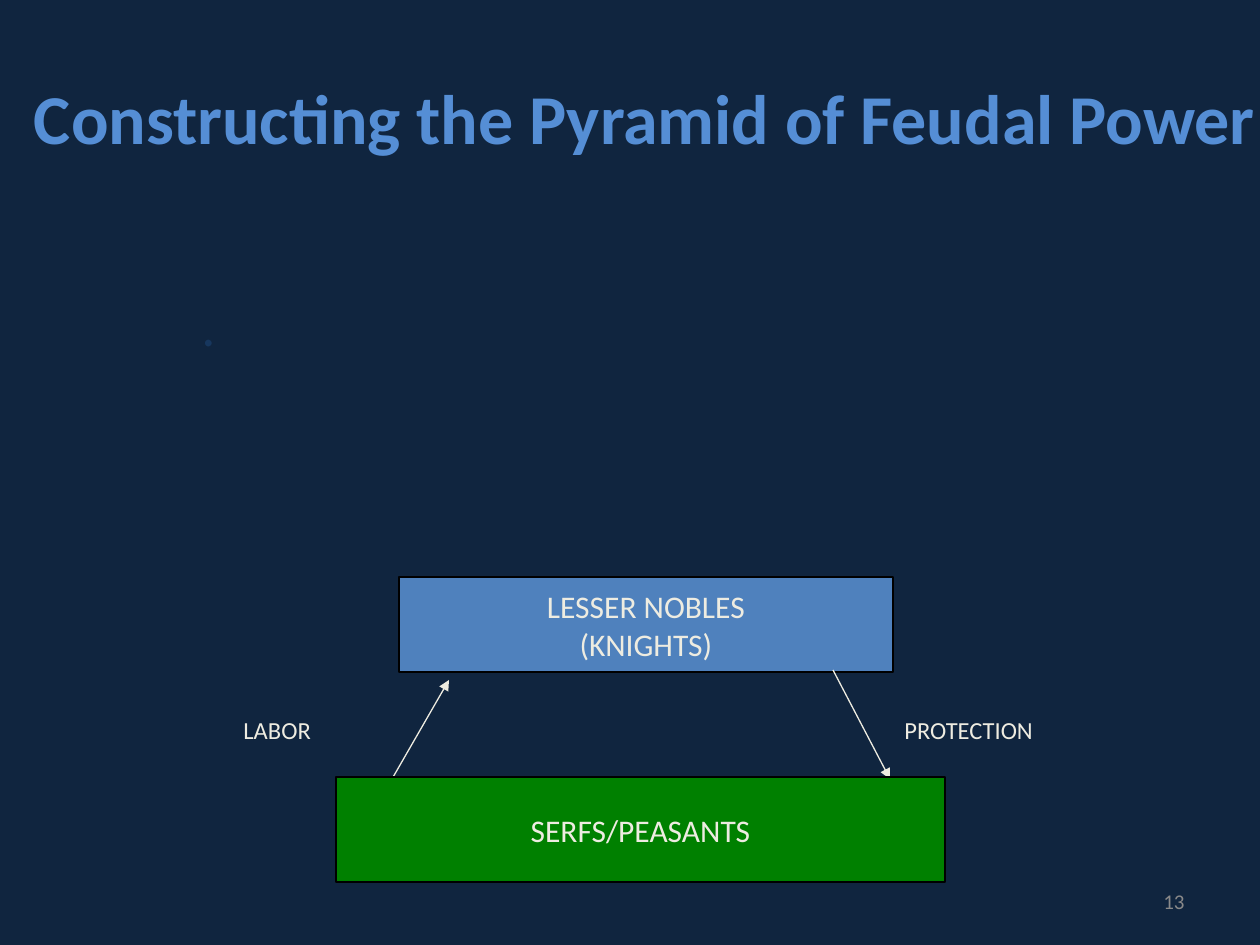
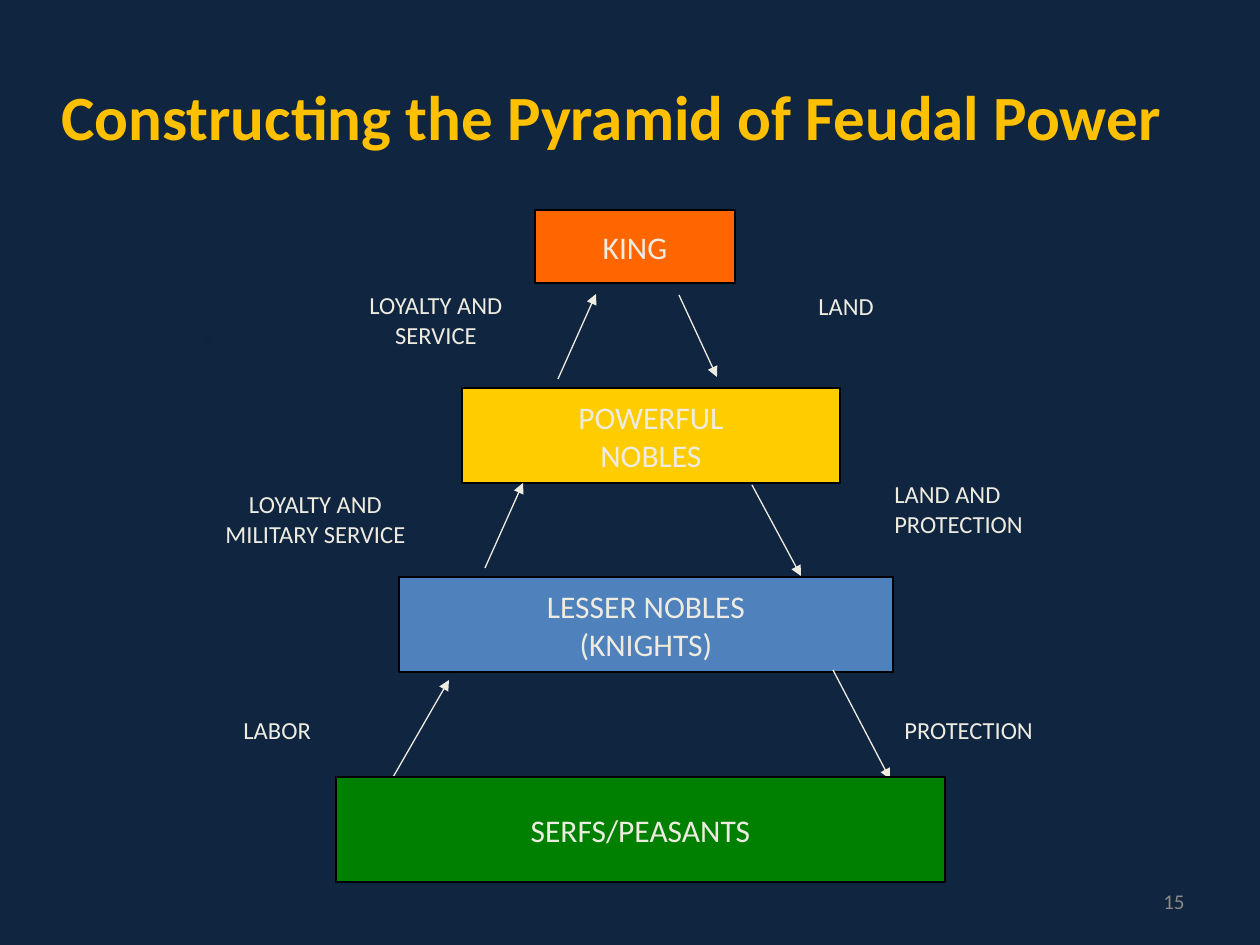
from lxml import etree
from pptx import Presentation
from pptx.dml.color import RGBColor
from pptx.enum.shapes import MSO_CONNECTOR, MSO_SHAPE
from pptx.enum.text import MSO_ANCHOR, PP_ALIGN
from pptx.oxml.ns import qn
from pptx.util import Emu, Pt

LEFT, CENTER, RIGHT = PP_ALIGN.LEFT, PP_ALIGN.CENTER, PP_ALIGN.RIGHT
TOP, MIDDLE = MSO_ANCHOR.TOP, MSO_ANCHOR.MIDDLE
RECT, STRAIGHT = MSO_SHAPE.RECTANGLE, MSO_CONNECTOR.STRAIGHT

PX_PER_INCH = 126
FONT = "Calibri"
NAVY, CREAM, BLACK, GREY = "10253F", "EEECE1", "000000", "898989"
TITLE = "Constructing the Pyramid of Feudal Power"


def px(n):
    return Emu(round(n * 914400 / PX_PER_INCH))


def rgb(color):
    return RGBColor.from_string(color)


def write(sp, lines, size, color, align=LEFT, anchor=TOP, bold=False, wrap=True):
    """Fill a shape with one paragraph per line."""
    tf = sp.text_frame
    tf.word_wrap = wrap
    tf.vertical_anchor = anchor
    for i, line in enumerate(lines):
        p = tf.add_paragraph() if i else tf.paragraphs[0]
        p.alignment = align
        r = p.add_run()
        r.text = line
        r.font.name = FONT
        r.font.size = Pt(size)
        r.font.bold = bold
        r.font.color.rgb = rgb(color)


def add_text(s, box, lines, size, color, **style):
    sp = s.shapes.add_textbox(*map(px, box))
    write(sp, lines, size, color, **style)


def add_rank(s, box, fill, *lines):
    """One level of the pyramid."""
    sp = s.shapes.add_shape(RECT, *map(px, box))
    sp.shadow.inherit = False
    sp.fill.solid()
    sp.fill.fore_color.rgb = rgb(fill)
    sp.line.color.rgb = rgb(BLACK)
    sp.line.width = Pt(0.75)
    write(sp, lines, 18, CREAM, align=CENTER, anchor=MIDDLE)


def add_arrow(s, x1, y1, x2, y2):
    cx = s.shapes.add_connector(STRAIGHT, px(x1), px(y1), px(x2), px(y2))
    cx.line.color.rgb = rgb(CREAM)
    cx.line.width = Pt(0.75)
    etree.SubElement(cx.line._get_or_add_ln(), qn("a:tailEnd"), type="triangle")
    etree.SubElement(cx._element.spPr, qn("a:effectLst"))


def add_label(s, box, *lines, align=LEFT):
    add_text(s, box, lines, 14, CREAM, align=align)


def add_base_slide(prs, number, title_box, title_size, title_color, dot_color):
    """Background, page number, title and body text."""
    s = prs.slides.add_slide(prs.slide_layouts[6])
    s.background.fill.solid()
    s.background.fill.fore_color.rgb = rgb(NAVY)
    add_text(s, (903, 876, 294, 50), [number], 12, GREY, align=RIGHT, anchor=MIDDLE)
    add_text(s, title_box, [TITLE], title_size, title_color,
             align=CENTER, anchor=MIDDLE, bold=True, wrap=False)
    add_text(s, (189, 284, 840, 567), ["."], 32, dot_color)
    return s


def add_lower_ranks(s):
    """Knights and serfs with what they exchange."""
    add_rank(s, (399, 577, 494, 95), "4F81BD", "LESSER NOBLES", "(KNIGHTS)")
    add_arrow(s, 392, 779, 449, 680)
    add_arrow(s, 833, 670, 890, 779)
    add_label(s, (231, 709, 108, 42), "LABOR")
    add_label(s, (892, 709, 178, 42), "PROTECTION")
    add_rank(s, (336, 777, 609, 105), "008000", "SERFS/PEASANTS")


def add_upper_ranks(s):
    """King and powerful nobles with what they exchange."""
    add_rank(s, (462, 388, 378, 95), "FFCC00", "POWERFUL", "NOBLES")
    add_rank(s, (535, 210, 200, 73), "FF6600", "KING")
    add_arrow(s, 485, 568, 523, 483)
    add_arrow(s, 752, 485, 801, 576)
    add_arrow(s, 558, 379, 596, 294)
    add_arrow(s, 679, 295, 717, 377)
    add_label(s, (882, 473, 178, 72), "LAND AND", "PROTECTION")
    add_label(s, (806, 285, 93, 42), "LAND")
    add_label(s, (336, 284, 200, 72), "LOYALTY AND", "SERVICE", align=CENTER)
    add_label(s, (189, 483, 253, 72), "LOYALTY AND", "MILITARY SERVICE", align=CENTER)


def main():
    prs = Presentation()
    prs.slide_width, prs.slide_height = px(1260), px(945)

    s = add_base_slide(prs, "13", (21, 64, 1247, 105), 40, "558ED5", "17375E")
    add_lower_ranks(s)

    s = add_base_slide(prs, "15", (0, 63, 1223, 105), 36, "FFC000", "0F243E")
    add_lower_ranks(s)
    add_upper_ranks(s)

    prs.save("out.pptx")


if __name__ == "__main__":
    main()
